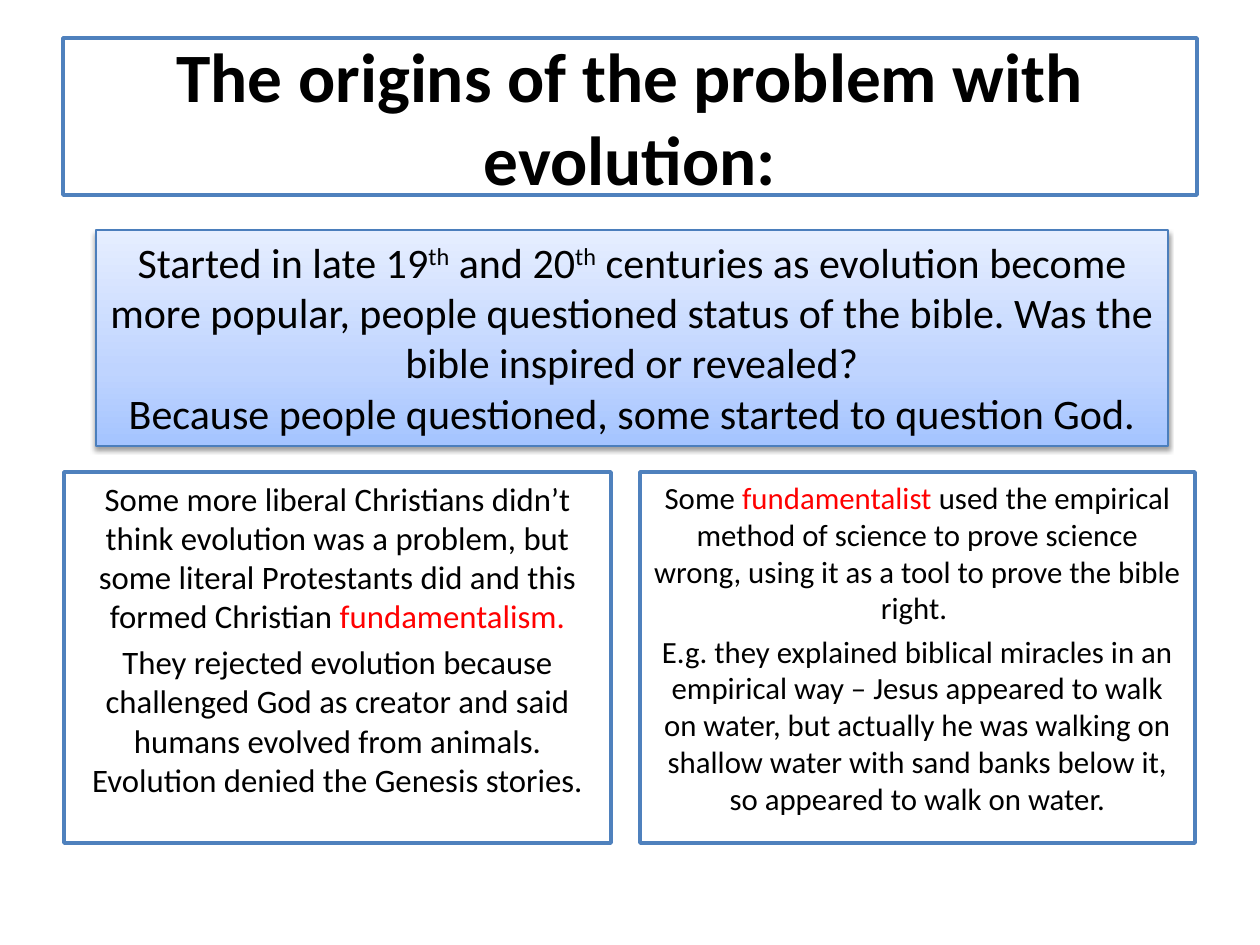
from dataclasses import dataclass
from copy import deepcopy
from lxml import etree
from pptx import Presentation
from pptx import util as u
from pptx.dml.color import RGBColor
from pptx.enum import text
from pptx.oxml.ns import qn


@dataclass(frozen=True)
class Theme:
    font: str = "Calibri"
    ink: str = "000000"
    key: str = "FF0000"
    paper: str = "FFFFFF"
    edge: str = "4F81BD"
    rim: str = "4B7EBC"
    fade: tuple = ((0, "A4C4FF"), (0.35, "BFD4FF"), (1, "E6EEFF"))
    head: float = 39.6
    lead: float = 24
    left: float = 18.7
    right: float = 17.6


def put(item, vals):
    for name, val in vals.items():
        setattr(item, name, val)


class Maker:
    scale = u.Inches(1) / 126

    def __init__(self, deck, theme):
        self.theme = theme
        self.slide = deck.slides.add_slide(deck.slide_layouts[3])

    def place(self, shape, box):
        names = ("left", "top", "width", "height")
        put(shape, {n: round(v * self.scale) for n, v in zip(names, box)})

    def letter(self, shape, paras, size, bold=False, fit=text.MSO_AUTO_SIZE.NONE):
        frame = shape.text_frame
        put(frame, {"word_wrap": True, "auto_size": fit})
        for i, runs in enumerate(paras):
            para = frame.add_paragraph() if i else frame.paragraphs[0]
            para.alignment = text.PP_ALIGN.CENTER
            for words, kind in runs:
                run = para.add_run()
                run.text = words
                put(run.font, {"name": self.theme.font, "size": u.Pt(size), "bold": bold})
                color = self.theme.key if kind == "key" else self.theme.ink
                run.font.color.rgb = RGBColor.from_string(color)
                if kind == "sup":
                    run._r.get_or_add_rPr().set("baseline", "30000")

    def frame(self, shape, color, width):
        shape.line.color.rgb = RGBColor.from_string(color)
        shape.line.width = u.Pt(width)

    def panel(self, shape, box):
        self.place(shape, box)
        shape.fill.solid()
        shape.fill.fore_color.rgb = RGBColor.from_string(self.theme.paper)
        self.frame(shape, self.theme.edge, 2)

    def title(self, words, box):
        shape = self.slide.shapes.title
        self.panel(shape, box)
        self.letter(shape, [[(words, "")]], self.theme.head, True)
        shape.text_frame.vertical_anchor = text.MSO_ANCHOR.MIDDLE

    def body(self, slot, paras, box, size):
        shape = self.slide.placeholders[slot]
        self.panel(shape, box)
        self.letter(shape, paras, size)
        for para in shape.text_frame.paragraphs:
            para.space_before = u.Pt(round(size * 0.2, 1))
            props = para._p.get_or_add_pPr()
            props.set("marL", "0")
            props.set("indent", "0")
            etree.SubElement(props, qn("a:buNone"))

    def lead(self, paras, box):
        shape = self.slide.shapes.add_textbox(0, 0, 0, 0)
        self.place(shape, box)
        self.letter(shape, paras, self.theme.lead, fit=text.MSO_AUTO_SIZE.SHAPE_TO_FIT_TEXT)
        self.fade(shape)
        self.frame(shape, self.theme.rim, 0.75)
        self.shade(shape)

    def fade(self, shape):
        fill = shape.fill
        fill.gradient()
        fill.gradient_angle = 90
        stops = shape._element.spPr.find(".//" + qn("a:gsLst"))
        stops.append(deepcopy(stops[-1]))
        for stop, (pos, color) in zip(fill.gradient_stops, self.theme.fade):
            stop.color.rgb = RGBColor.from_string(color)
            stop.position = pos

    def shade(self, shape):
        shape.shadow.inherit = False
        effect = shape._element.spPr.find(qn("a:effectLst"))
        cast = etree.SubElement(effect, qn("a:outerShdw"), blurRad=str(u.Pt(3.1)),
                                dist=str(u.Pt(1.6)), dir="5400000", rotWithShape="0")
        tint = etree.SubElement(cast, qn("a:srgbClr"), val=self.theme.ink)
        etree.SubElement(tint, qn("a:alpha"), val="38000")


def main():
    deck = Presentation()
    put(deck, {"slide_width": u.Inches(10), "slide_height": u.Inches(7.5)})
    theme = Theme()
    make = Maker(deck, theme)
    make.title("The origins of the problem with evolution:", (63, 38, 1134, 157))
    make.body(1, [
        [("Some more liberal Christians didn’t think evolution was a problem, but some "
          "literal Protestants did and this formed Christian ", ""),
         ("fundamentalism.", "key")],
        [("They rejected evolution because challenged God as creator and said humans "
          "evolved from animals. Evolution denied the Genesis stories.", "")],
    ], (64, 472, 547, 371), theme.left)
    make.body(2, [
        [("Some ", ""), ("fundamentalist", "key"),
         (" used the empirical method of science to prove science wrong, using it as "
          "a tool to prove the bible right. ", "")],
        [("E.g. they explained biblical miracles in an empirical way – Jesus appeared "
          "to walk on water, but actually he was walking on shallow water with sand "
          "banks below it, so appeared to walk on water.", "")],
    ], (640, 472, 555, 371), theme.right)
    make.lead([
        [("Started in late 19", ""), ("th", "sup"), (" and 20", ""), ("th", "sup"),
         (" centuries as evolution become more popular, people questioned status of "
          "the bible. Was the bible inspired or revealed?", "")],
        [("Because people questioned, some started to question God.", "")],
    ], (96, 230, 1072, 216))
    deck.save("out.pptx")


if __name__ == "__main__":
    main()
